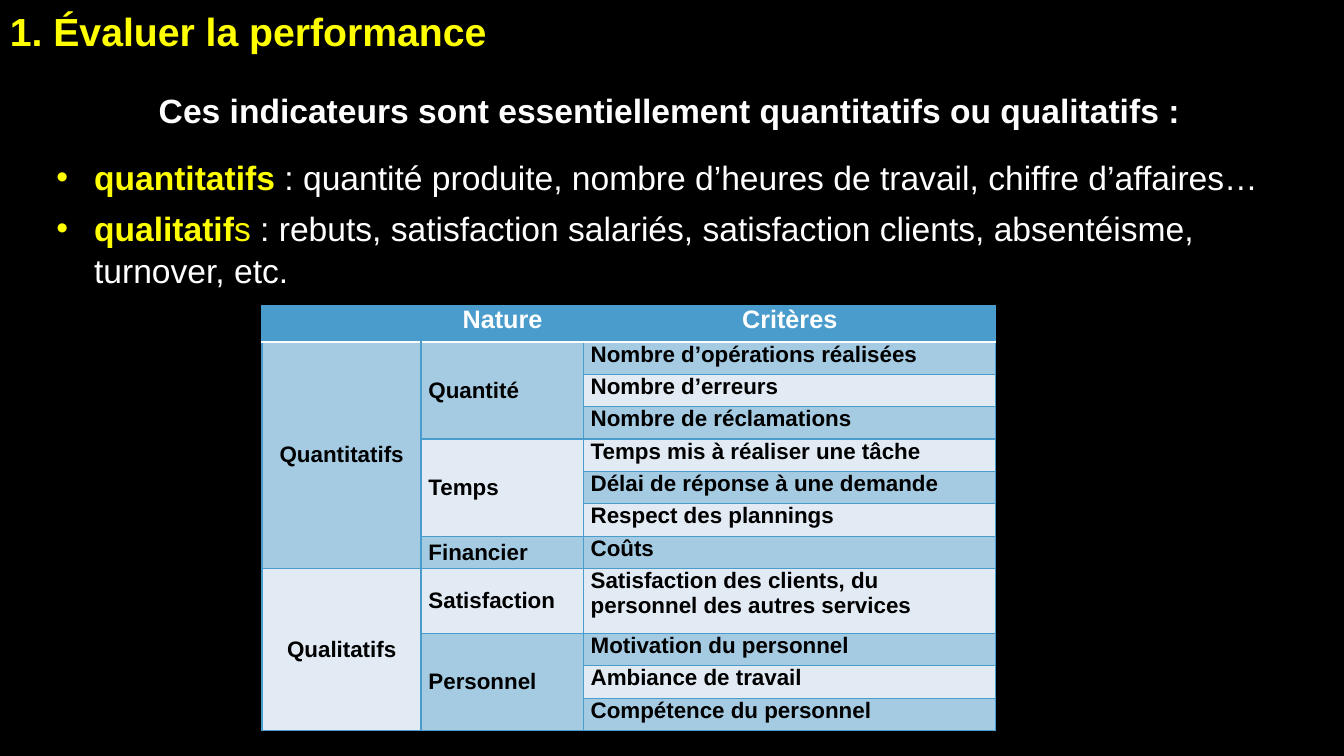
"""Builds the slide on quantitative and qualitative performance indicators."""
from lxml import etree
from pptx import Presentation
from pptx.dml.color import RGBColor
from pptx.enum import text as t
from pptx.oxml import ns
from pptx.util import Pt

BLACK = RGBColor(0x00, 0x00, 0x00)
WHITE = RGBColor(0xFF, 0xFF, 0xFF)
YELLOW = RGBColor(0xFF, 0xFF, 0x00)
BLUE = RGBColor(0x4A, 0x9C, 0xCC)
LIGHT_BLUE = RGBColor(0xA5, 0xCB, 0xE3)
PALE = RGBColor(0xE2, 0xEA, 0xF3)

TITLE = [{"runs": [("1. Évaluer la performance", YELLOW, True)], "after": 3}]
INDICATORS = [
    {"runs": [("Ces indicateurs sont essentiellement quantitatifs ou qualitatifs :", WHITE, True)],
     "before": 6, "after": 12, "centred": True},
    {"runs": [("quantitatifs", YELLOW, True),
              (" : quantité produite, nombre d’heures de travail, chiffre d’affaires…", WHITE, False)],
     "before": 6, "bullet": True},
    {"runs": [("qualitatif", YELLOW, True), ("s", YELLOW, False),
              (" : rebuts, satisfaction salariés, satisfaction clients, absentéisme, turnover, etc.",
               WHITE, False)],
     "before": 6, "after": 12, "bullet": True},
]
HEADERS = ["", "Nature", "Critères"]
CRITERIA = [
    ("Quantitatifs", [
        ("Quantité", ["Nombre d’opérations réalisées", "Nombre d’erreurs", "Nombre de réclamations"]),
        ("Temps", ["Temps mis à réaliser une tâche", "Délai de réponse à une demande",
                   "Respect des plannings"]),
        ("Financier", ["Coûts"])]),
    ("Qualitatifs", [
        ("Satisfaction", ["Satisfaction des clients, du personnel des autres services"]),
        ("Personnel", ["Motivation du personnel", "Ambiance de travail", "Compétence du personnel"])]),
]
COLUMN_WIDTHS = [113.8, 115.9, 294.5]
HEADER_HEIGHT, LINE_HEIGHT, TALL_ROW = 26, 23.15, 8


def style_run(span, size, colour, bold):
    span.font.name = "Arial"
    span.font.size = Pt(size)
    span.font.bold = bold
    span.font.color.rgb = colour


def add_text(page, left, top, width, height, paragraphs, size):
    box = page.shapes.add_textbox(Pt(left), Pt(top), Pt(width), Pt(height))
    frame = box.text_frame
    frame.word_wrap = True
    for index, item in enumerate(paragraphs):
        para = frame.add_paragraph() if index else frame.paragraphs[0]
        para.line_spacing = 1.05
        para.space_before = Pt(item.get("before", 0))
        para.space_after = Pt(item.get("after", 0))
        if item.get("centred"):
            para.alignment = t.PP_ALIGN.CENTER
        for words, colour, bold in item["runs"]:
            span = para.add_run()
            span.text = words
            style_run(span, size, colour, bold)
        if item.get("bullet"):
            props = para._p.get_or_add_pPr()
            props.set("marL", str(Pt(27)))
            props.set("indent", str(-Pt(27)))
            font = etree.SubElement(props, ns.qn("a:buFont"))
            font.set("typeface", "Arial")
            etree.SubElement(props, ns.qn("a:buChar")).set("char", "•")


def set_borders(cell, row, column):
    props = cell._tc.get_or_add_tcPr()
    for side in ("L", "R", "T", "B"):
        under_header = (row, side) in ((0, "B"), (1, "T"))
        beside_first = row > 0 and (column, side) in ((0, "R"), (1, "L"))
        line = etree.SubElement(props, ns.qn("a:ln" + side))
        line.set("w", str(Pt(1.5 if under_header or beside_first else 1)))
        fill = etree.SubElement(line, ns.qn("a:solidFill"))
        colour = etree.SubElement(fill, ns.qn("a:srgbClr"))
        colour.set("val", str(WHITE if under_header else BLUE))


def fill_cell(cell, words, size, colour, centred, spacing=0):
    para = cell.text_frame.paragraphs[0]
    para.text = words
    para.alignment = t.PP_ALIGN.CENTER if centred else t.PP_ALIGN.LEFT
    para.space_before = para.space_after = Pt(spacing)
    for span in para.runs:
        style_run(span, size, colour, True)


def add_group(table, row, column, count, words):
    cell = table.cell(row, column)
    if count > 1:
        cell.merge(table.cell(row + count - 1, column))
    cell.vertical_anchor = t.MSO_ANCHOR.MIDDLE
    fill_cell(cell, words, 16, BLACK, column == 0)


def add_criteria_table(page):
    row_count = 1 + sum(len(items) for _, natures in CRITERIA for _, items in natures)
    heights = [HEADER_HEIGHT] + [LINE_HEIGHT] * (row_count - 1)
    heights[TALL_ROW] *= 2
    table = page.shapes.add_table(row_count, 3, Pt(187.2), Pt(218.2),
                                  Pt(sum(COLUMN_WIDTHS)), Pt(sum(heights))).table
    for column, width in zip(table.columns, COLUMN_WIDTHS):
        column.width = Pt(width)
    for index, height in enumerate(heights):
        table.rows[index].height = Pt(height)
        for column in range(3):
            cell = table.cell(index, column)
            cell.margin_left = cell.margin_right = Pt(5.1)
            cell.margin_top = cell.margin_bottom = 0
            set_borders(cell, index, column)
            cell.fill.solid()
            band = LIGHT_BLUE if index % 2 else PALE
            cell.fill.fore_color.rgb = band if index else BLUE
    for column, words in enumerate(HEADERS):
        fill_cell(table.cell(0, column), words, 18, WHITE, True)
    row = 1
    for family, natures in CRITERIA:
        add_group(table, row, 0, sum(len(items) for _, items in natures), family)
        for nature, items in natures:
            add_group(table, row, 1, len(items), nature)
            for words in items:
                fill_cell(table.cell(row, 2), words, 16, BLACK, False, 1)
                row += 1


def main():
    deck = Presentation()
    deck.slide_width, deck.slide_height = Pt(960), Pt(540)
    page = deck.slides.add_slide(deck.slide_layouts[6])
    page.background.fill.solid()
    page.background.fill.fore_color.rgb = BLACK
    add_text(page, 0, 0, 787.7, 41, TITLE, 28)
    add_text(page, 33.1, 59, 890, 147.6, INDICATORS, 24)
    add_criteria_table(page)
    deck.save("out.pptx")


if __name__ == "__main__":
    main()
